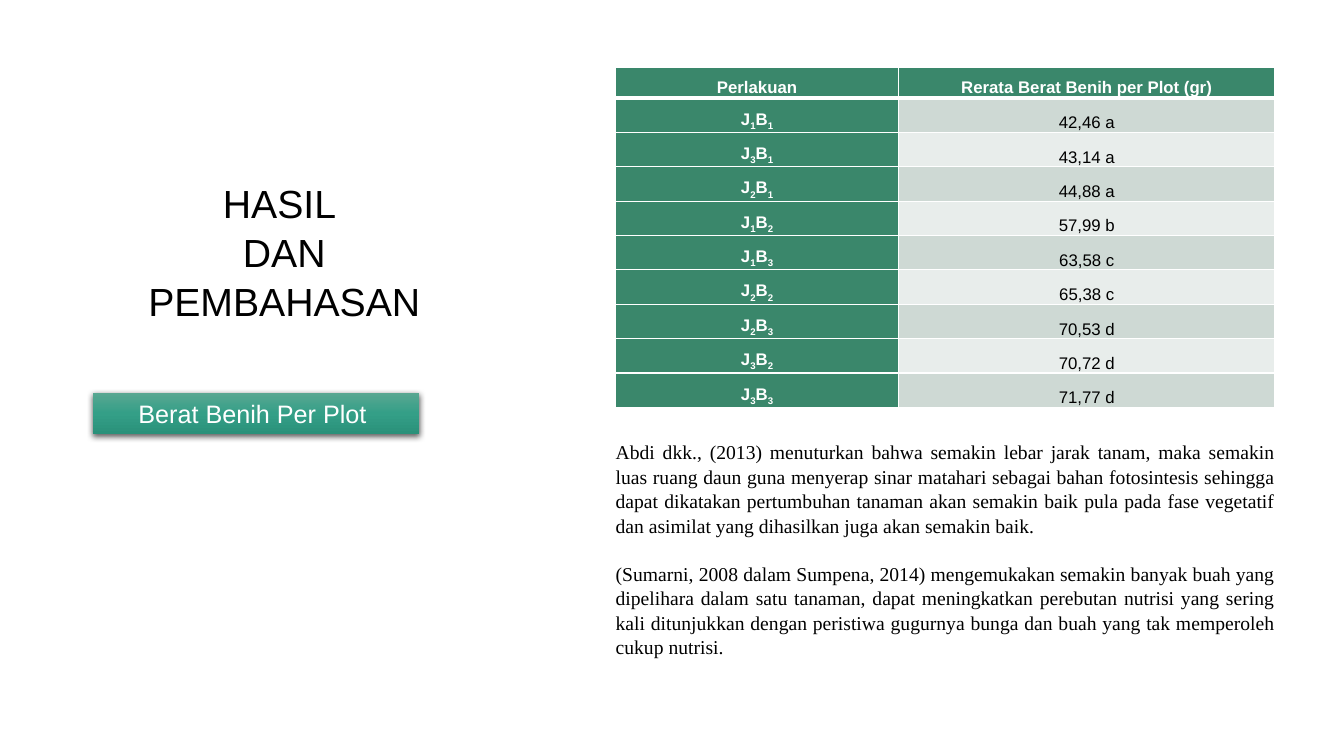
from lxml import etree
from pptx import Presentation
from pptx.dml.color import RGBColor
from pptx.enum.shapes import MSO_SHAPE
from pptx.enum.text import MSO_ANCHOR, PP_ALIGN
from pptx.oxml import parse_xml
from pptx.oxml.ns import qn
from pptx.util import Pt

RECT = MSO_SHAPE.RECTANGLE
CENTER, JUSTIFY = PP_ALIGN.CENTER, PP_ALIGN.JUSTIFY
MIDDLE, BOTTOM = MSO_ANCHOR.MIDDLE, MSO_ANCHOR.BOTTOM
NS = 'xmlns:a="http://schemas.openxmlformats.org/drawingml/2006/main"'
COLORS = {
    "white": "FFFFFF", "black": "000000", "green": "3A876B",
    "band_dark": "CED9D4", "band_light": "E8EDEB",
    "grad_top": "59A792", "grad_mid": "349F87", "grad_end": "2A917A",
}
TITLE = ["HASIL ", "DAN", "PEMBAHASAN"]
DISCUSSION = [
    "Abdi dkk., (2013) menuturkan bahwa semakin lebar jarak tanam, maka semakin luas ruang daun "
    "guna menyerap sinar matahari sebagai bahan fotosintesis sehingga dapat dikatakan pertumbuhan "
    "tanaman akan semakin baik pula pada fase vegetatif dan asimilat yang dihasilkan juga akan "
    "semakin baik.",
    "(Sumarni, 2008 dalam Sumpena, 2014) mengemukakan semakin banyak buah yang dipelihara dalam "
    "satu tanaman, dapat meningkatkan perebutan nutrisi yang sering kali ditunjukkan dengan "
    "peristiwa gugurnya bunga dan buah yang tak memperoleh cukup nutrisi. ",
]
HEADERS = ["Perlakuan", "Rerata Berat Benih per Plot (gr)"]
YIELDS = [
    ("J1B1", "42,46 a"), ("J3B1", "43,14 a"), ("J2B1", "44,88 a"),
    ("J1B2", "57,99 b"), ("J1B3", "63,58 c"), ("J2B2", "65,38 c"),
    ("J2B3", "70,53 d"), ("J3B2", "70,72 d"), ("J3B3", "71,77 d"),
]


def style_paragraph(p, size, color, font="Arial", align=CENTER, bold=False, spacing=None):
    p.alignment = align
    p.line_spacing = spacing
    p.font.size = Pt(size)
    p.font.name = font
    p.font.bold = bold
    p.font.color.rgb = RGBColor.from_string(COLORS[color])


def add_text(s, box, lines, size, font, align, gap=0):
    tf = s.shapes.add_textbox(*map(Pt, box)).text_frame
    tf.word_wrap = True
    for i, line in enumerate(lines):
        p = tf.paragraphs[0] if i == 0 else tf.add_paragraph()
        p.text = line
        style_paragraph(p, size, "black", font, align, spacing=1.04)
        if i:
            p.space_before = Pt(gap)


def add_button(s, box, text):
    sp = s.shapes.add_shape(RECT, *map(Pt, box))
    sp.line.fill.background()
    sp.shadow.inherit = False
    stops = "".join(
        f'<a:gs pos="{pos}"><a:srgbClr val="{COLORS[name]}"/></a:gs>'
        for pos, name in ((0, "grad_top"), (50000, "grad_mid"), (100000, "grad_end")))
    props = sp.element.spPr
    props.find(qn("a:prstGeom")).addnext(parse_xml(
        f'<a:gradFill {NS}><a:gsLst>{stops}</a:gsLst><a:lin ang="5400000" scaled="0"/></a:gradFill>'))
    props.find(qn("a:effectLst")).append(parse_xml(
        f'<a:outerShdw {NS} blurRad="{Pt(4.5)}" dist="{Pt(1.5)}" dir="5400000" rotWithShape="0">'
        f'<a:srgbClr val="{COLORS["black"]}"><a:alpha val="63000"/></a:srgbClr></a:outerShdw>'))
    tf = sp.text_frame
    tf.word_wrap = True
    tf.vertical_anchor = MIDDLE
    p = tf.paragraphs[0]
    p.text = text
    style_paragraph(p, 18, "white")


def set_borders(cell, top, bottom):
    props = cell._tc.get_or_add_tcPr()
    for side, width in (("L", 1), ("R", 1), ("T", top), ("B", bottom)):
        ln = etree.SubElement(props, qn(f"a:ln{side}"), w=str(Pt(width)))
        fill = etree.SubElement(ln, qn("a:solidFill"))
        etree.SubElement(fill, qn("a:srgbClr"), val=COLORS["white"])


def fill_cell(cell, text, fill, color, anchor, bold, top=1, bottom=1, subscripts=False):
    set_borders(cell, top, bottom)
    cell.fill.solid()
    cell.fill.fore_color.rgb = RGBColor.from_string(COLORS[fill])
    cell.margin_left = cell.margin_right = Pt(5)
    cell.margin_top = cell.margin_bottom = 0
    cell.vertical_anchor = anchor
    p = cell.text_frame.paragraphs[0]
    style_paragraph(p, 12, color, bold=bold, spacing=1.5)
    for part in text if subscripts else [text]:
        r = p.add_run()
        r.text = part
        if subscripts and part.isdigit():
            r._r.get_or_add_rPr().set("baseline", "-25000")


def add_yield_table(s, left, top, widths, header_height, row_height):
    height = header_height + row_height * len(YIELDS)
    table = s.shapes.add_table(len(YIELDS) + 1, len(widths), Pt(left), Pt(top),
                               Pt(sum(widths)), Pt(height)).table
    for column, width in zip(table.columns, widths):
        column.width = Pt(width)
    for i, row in enumerate(table.rows):
        row.height = Pt(row_height if i else header_height)
    for j, header in enumerate(HEADERS):
        fill_cell(table.cell(0, j), header, "green", "white", MIDDLE, True, bottom=3)
    for i, (treatment, value) in enumerate(YIELDS, 1):
        edge = 3 if i == 1 else 1
        band = "band_dark" if i % 2 else "band_light"
        fill_cell(table.cell(i, 0), treatment, "green", "white", MIDDLE, True, edge, subscripts=True)
        fill_cell(table.cell(i, 1), value, band, "black", BOTTOM, False, edge)


def main():
    prs = Presentation()
    prs.slide_width, prs.slide_height = Pt(960), Pt(540)
    s = prs.slides.add_slide(prs.slide_layouts[6])
    add_button(s, (66.4, 280.7, 233, 29.1), "Berat Benih Per Plot ")
    add_text(s, (97.2, 123.1, 211.7, 108.7), TITLE, 28, "Arial", CENTER)
    add_text(s, (432.7, 310.3, 485.3, 159.8), DISCUSSION, 14, "Times New Roman", JUSTIFY, 16.8)
    add_yield_table(s, 439.8, 48.4, (202, 269), 21.1, 24.5)
    prs.save("out.pptx")


if __name__ == "__main__":
    main()
